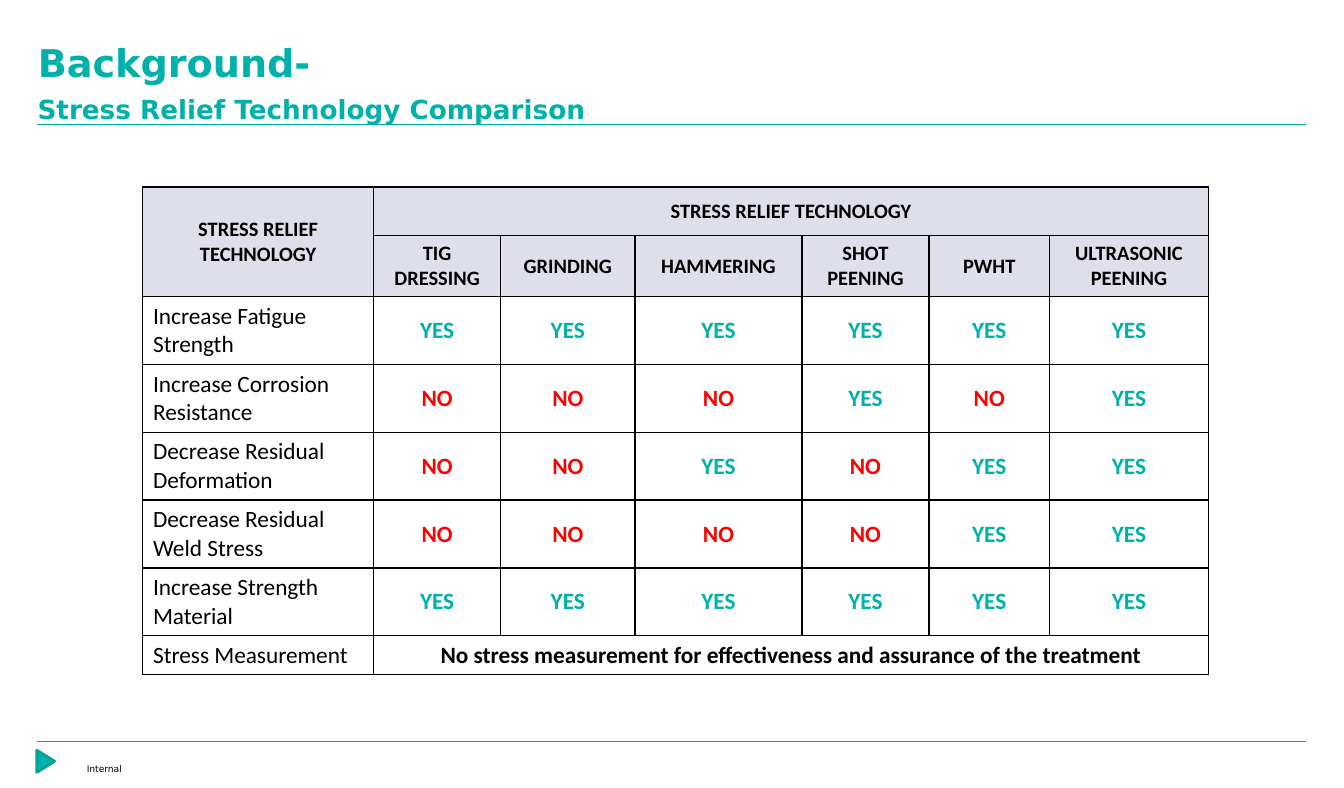
from lxml import etree
from pptx import Presentation
from pptx.dml.color import RGBColor
from pptx.enum import shapes, text
from pptx.oxml import ns
from pptx.util import Cm, Pt

TEAL, DARK_TEAL, RED = "00B1A9", "00A29A", "FF0000"
BLACK, WHITE, LAVENDER = "000000", "FFFFFF", "DFDFEB"
HEADING_FONT, TABLE_FONT = "DejaVu Sans", "Calibri"
ANSWER_COLORS = {"YES": TEAL, "NO": RED}

COLUMN_WIDTHS = [5.59, 3.07, 3.25, 4.04, 3.07, 2.92, 3.84]
ROW_HEIGHTS = [1.18, 1.47] + [1.64] * 5 + [0.94]
TECHNOLOGIES = ["TIG DRESSING", "GRINDING", "HAMMERING", "SHOT PEENING",
                "PWHT", "ULTRASONIC PEENING"]
EFFECTS = [
    ("Increase Fatigue Strength", "YES YES YES YES YES YES"),
    ("Increase Corrosion Resistance", "NO NO NO YES NO YES"),
    ("Decrease Residual Deformation", "NO NO YES NO YES YES"),
    ("Decrease Residual Weld Stress", "NO NO NO NO YES YES"),
    ("Increase Strength Material", "YES YES YES YES YES YES"),
]


def rgb(hex_color):
    return RGBColor.from_string(hex_color)


def write(frame, words, size, font_name, color=BLACK, bold=False,
          align=text.PP_ALIGN.LEFT):
    frame.text = words
    paragraph = frame.paragraphs[0]
    paragraph.alignment = align
    font = paragraph.runs[0].font
    font.size, font.name, font.bold = Pt(size), font_name, bold
    font.color.rgb = rgb(color)


def add_title(slide, words):
    title = slide.shapes.title
    title.left, title.top = Cm(0.66), Cm(0.74)
    title.width, title.height = Cm(23.93), Cm(1.55)
    frame = title.text_frame
    write(frame, words, 26.2, HEADING_FONT, TEAL, bold=True)
    frame.auto_size = text.MSO_AUTO_SIZE.NONE
    frame.vertical_anchor = text.MSO_ANCHOR.MIDDLE


def add_label(slide, words, left, top, width, height, size, **style):
    label = slide.shapes.add_textbox(Cm(left), Cm(top), Cm(width), Cm(height))
    write(label.text_frame, words, size, HEADING_FONT, **style)
    return label.text_frame


def add_rule(slide, top, color):
    """Draw a thin line across the slide between the side margins."""
    rule = slide.shapes.add_connector(
        shapes.MSO_CONNECTOR.STRAIGHT, Cm(0.89), Cm(top), Cm(31.6), Cm(top))
    rule.line.color.rgb = rgb(color)
    rule.line.width = Pt(0.75)
    etree.SubElement(rule._element.spPr, ns.qn("a:effectLst"))


def add_footer_arrow(slide):
    arrow = slide.shapes.add_shape(
        shapes.MSO_SHAPE.ISOSCELES_TRIANGLE,
        Cm(0.84), Cm(18.19), Cm(0.53), Cm(0.43))
    arrow.rotation = 90
    arrow.shadow.inherit = False
    arrow.fill.solid()
    arrow.fill.fore_color.rgb = rgb(TEAL)
    arrow.line.color.rgb = rgb(DARK_TEAL)
    arrow.line.width = Pt(2)


def add_borders(cell):
    properties = cell._tc.get_or_add_tcPr()
    for side in ("lnL", "lnR", "lnT", "lnB"):
        border = etree.SubElement(properties, ns.qn("a:" + side), w=str(Pt(1)))
        fill = etree.SubElement(border, ns.qn("a:solidFill"))
        etree.SubElement(fill, ns.qn("a:srgbClr"), val=BLACK)


def fill_cell(cell, words, size, color=BLACK, bold=True,
              align=text.PP_ALIGN.CENTER):
    write(cell.text_frame, words, size, TABLE_FONT, color, bold, align)
    cell.vertical_anchor = text.MSO_ANCHOR.MIDDLE


def add_comparison(slide):
    table = slide.shapes.add_table(
        len(ROW_HEIGHTS), len(COLUMN_WIDTHS), Cm(3.45), Cm(4.52),
        Cm(sum(COLUMN_WIDTHS)), Cm(sum(ROW_HEIGHTS))).table
    for column, width in zip(table.columns, COLUMN_WIDTHS):
        column.width = Cm(width)
    for index, (row, height) in enumerate(zip(table.rows, ROW_HEIGHTS)):
        row.height = Cm(height)
        for cell in row.cells:
            add_borders(cell)
            cell.fill.solid()
            cell.fill.fore_color.rgb = rgb(LAVENDER if index < 2 else WHITE)

    last_row, last_column = len(ROW_HEIGHTS) - 1, len(COLUMN_WIDTHS) - 1
    table.cell(0, 0).merge(table.cell(1, 0))
    for row in (0, last_row):
        table.cell(row, 1).merge(table.cell(row, last_column))

    for column in (0, 1):
        fill_cell(table.cell(0, column), "STRESS RELIEF TECHNOLOGY", 14)
    for column, technology in enumerate(TECHNOLOGIES, 1):
        fill_cell(table.cell(1, column), technology, 14)

    for row, (effect, answers) in enumerate(
            EFFECTS + [("Stress Measurement", "")], 2):
        fill_cell(table.cell(row, 0), effect, 16, bold=False,
                  align=text.PP_ALIGN.LEFT)
        for column, answer in enumerate(answers.split(), 1):
            fill_cell(table.cell(row, column), answer, 16,
                      ANSWER_COLORS[answer])
    fill_cell(table.cell(last_row, 1),
              "No stress measurement for effectiveness and assurance "
              "of the treatment", 16)


def main():
    deck = Presentation()
    deck.slide_width, deck.slide_height = Cm(32.51), Cm(19.05)
    slide = deck.slides.add_slide(deck.slide_layouts[5])

    add_rule(slide, 17.93, DARK_TEAL)
    add_rule(slide, 3.02, "00ACA4")
    add_footer_arrow(slide)
    add_title(slide, "Background-")
    footer = add_label(slide, "Internal", 1.85, 18.34, 28.8, 0.7, 6.3)
    footer.word_wrap = True
    add_comparison(slide)
    subtitle = add_label(slide, "Stress Relief Technology Comparison",
                         0.66, 2.13, 13.89, 1.02, 18, color=TEAL, bold=True)
    subtitle.word_wrap = False
    subtitle.auto_size = text.MSO_AUTO_SIZE.SHAPE_TO_FIT_TEXT

    deck.save("out.pptx")


if __name__ == "__main__":
    main()
